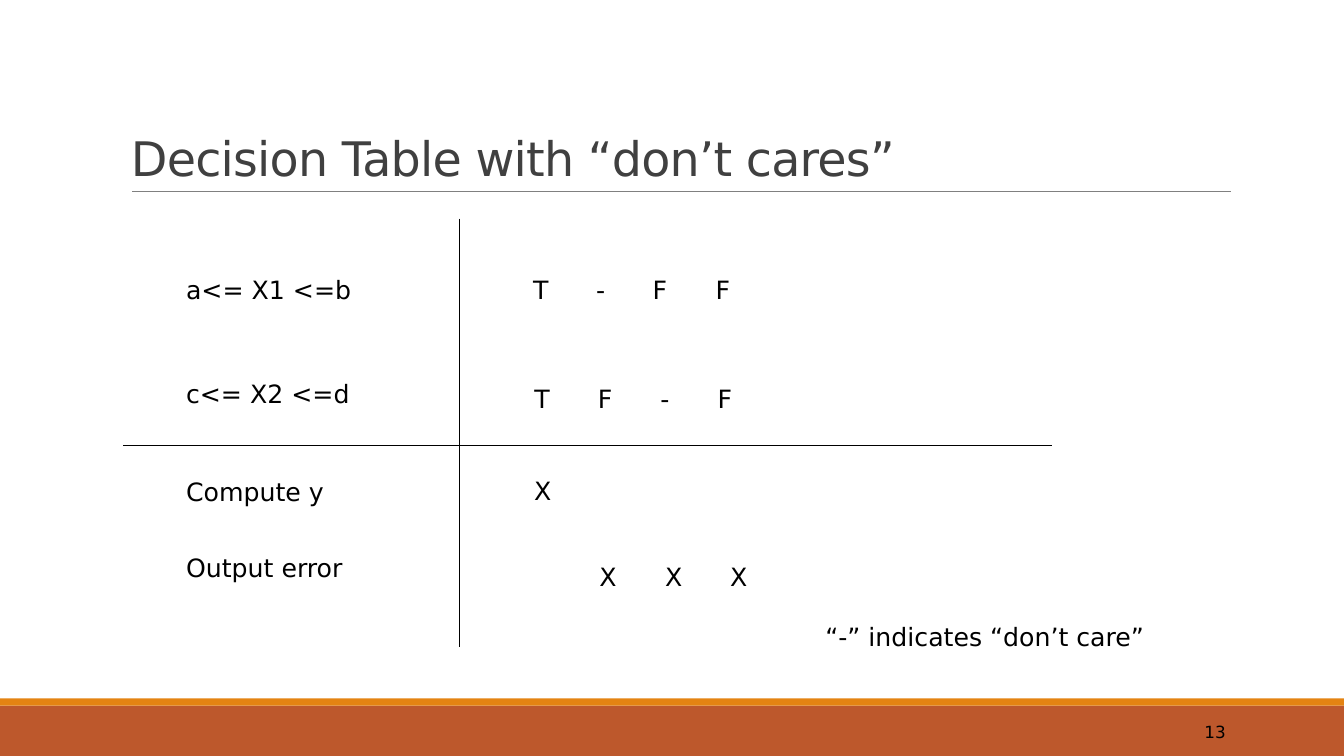
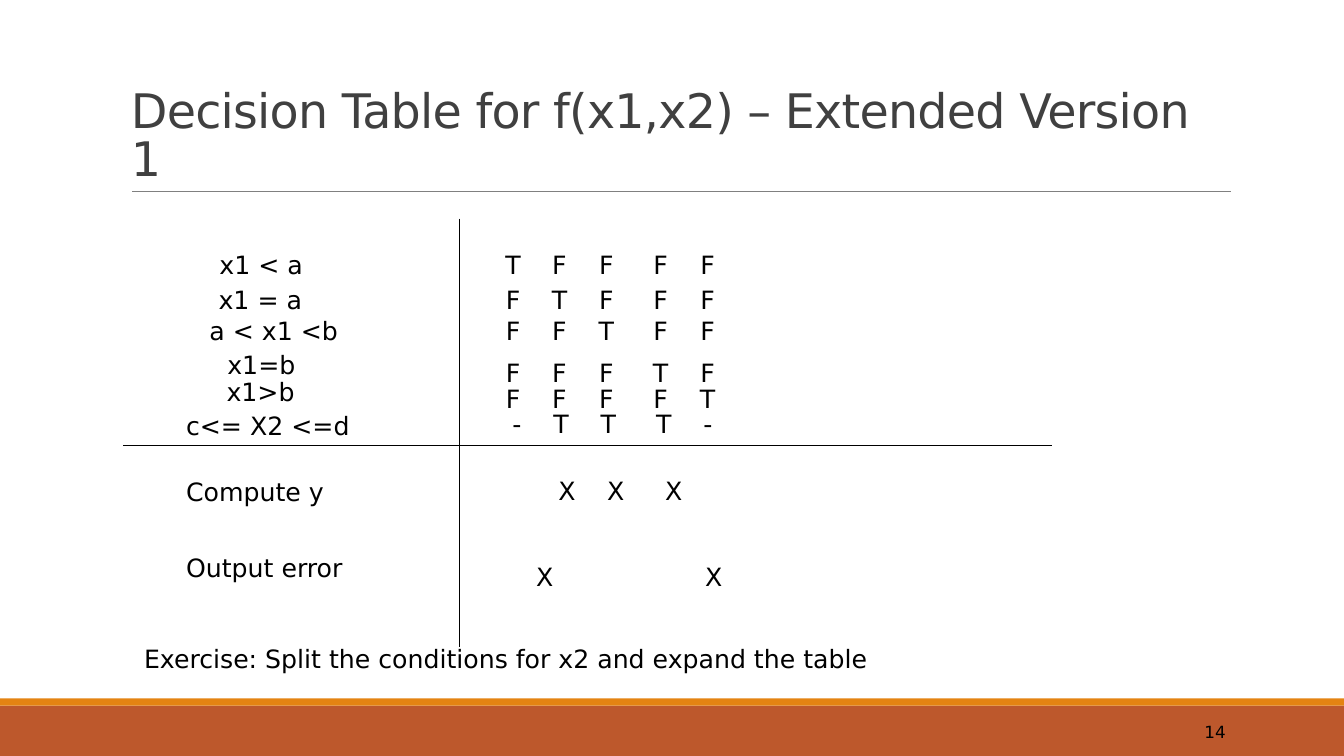
import pptx
import pptx.util
import pptx.dml.color
import pptx.enum.shapes
import pptx.enum.text
import pptx.oxml
import pptx.oxml.ns

Cm = pptx.util.Cm
Pt = pptx.util.Pt
qn = pptx.oxml.ns.qn
ANCHOR = pptx.enum.text.MSO_ANCHOR

FONT = "DejaVu Sans"
COLORS = {
    "band": "BD582C",
    "stripe": "E48312",
    "rule": "808080",
    "title": "404040",
    "text": "000000",
}
BANDS = [("band", 17.78, 1.27), ("stripe", 17.6, 0.18)]
LINES = [
    ("rule", 0.5, 3.33, 4.83, 31.01, 4.83),
    ("text", 0.75, 11.58, 5.51, 11.58, 16.31),
    ("text", 0.75, 3.1, 11.23, 26.52, 11.23),
]
ACTIONS = [("Compute y", 4.69, 11.89), ("Output error", 4.69, 13.79)]
MARKS_LEFT = 12.3
RULES = [12.93, 14.1, 15.28, 16.65, 17.83]

SLIDES = [
    {
        "number": "13",
        "title": "Decision Table with “don’t cares”",
        "labels": [
            ("a<= X1 <=b", 4.69, 6.78),
            ("c<= X2 <=d", 4.69, 9.4),
            ("“-” indicates “don’t care”", 20.8, 15.54),
        ],
        "marks": [
            ("T-FF", 6.78, [13.63, 15.14, 16.63, 18.22]),
            ("TF-F", 9.53, [13.66, 15.25, 16.76, 18.27]),
            ("X", 11.86, [13.68]),
            ("XXX", 14.02, [15.32, 16.98, 18.62]),
        ],
    },
    {
        "number": "14",
        "title": "Decision Table for f(x1,x2) – Extended Version 1",
        "labels": [
            ("x1 < a", 5.53, 6.15),
            ("x1 = a", 5.51, 7.04),
            ("a < x1 <b", 5.28, 7.82),
            ("x1=b", 5.73, 8.69),
            ("x1>b", 5.71, 9.35),
            ("c<= X2 <=d", 4.69, 10.21),
            ("Exercise: Split the conditions for x2 and expand the table", 3.63, 16.08),
        ],
        "marks": [
            ("TFFFF", 6.15, RULES),
            ("FTFFF", 7.04, RULES),
            ("FFTFF", 7.82, RULES),
            ("FFFTF", 8.89, RULES),
            ("FFFFT", 9.53, RULES),
            ("-TTT-", 10.16, [13.03, 14.14, 15.33, 16.73, 17.84]),
            ("XXX", 11.86, [14.29, 15.52, 16.98]),
            ("XX", 14.02, [13.73, 17.99]),
        ],
    },
]


def rgb(name):
    return pptx.dml.color.RGBColor.from_string(COLORS[name])


def add_text(s, text, x, y, w, h=1.02, size=18, color="text", anchor=ANCHOR.TOP):
    tf = s.shapes.add_textbox(Cm(x), Cm(y), Cm(w), Cm(h)).text_frame
    tf.word_wrap = True
    tf.vertical_anchor = anchor
    tf.margin_left = tf.margin_right = 0
    p = tf.paragraphs[0]
    r = p.add_run()
    r.text = text
    r.font.name = FONT
    r.font.size = Pt(size)
    r.font.color.rgb = rgb(color)
    return p


prs = pptx.Presentation()
prs.slide_width = Cm(33.87)
prs.slide_height = Cm(19.05)

for data in SLIDES:
    s = prs.slides.add_slide(prs.slide_layouts[6])

    for color, y, h in BANDS:
        sp = s.shapes.add_shape(
            pptx.enum.shapes.MSO_SHAPE.RECTANGLE, 0, Cm(y), prs.slide_width, Cm(h)
        )
        sp.shadow.inherit = False
        sp.fill.solid()
        sp.fill.fore_color.rgb = rgb(color)
        sp.line.fill.background()

    for color, width, x1, y1, x2, y2 in LINES:
        line = s.shapes.add_connector(
            pptx.enum.shapes.MSO_CONNECTOR.STRAIGHT, Cm(x1), Cm(y1), Cm(x2), Cm(y2)
        )
        line.line.color.rgb = rgb(color)
        line.line.width = Pt(width)
        pptx.oxml.ns.qn
        line._element.spPr.append(pptx.oxml.parse_xml(
            '<a:effectLst xmlns:a="http://schemas.openxmlformats.org/drawingml/2006/main"/>'
        ))

    p = add_text(s, data["title"], 3.3, 0.79, 27.43, 4.04, 34, "title", ANCHOR.BOTTOM)
    p.line_spacing = 0.85
    p.runs[0].font._element.set("spc", "-50")

    p = add_text(s, data["number"], 27.51, 17.93, 3.38, 1.02, 12, anchor=ANCHOR.MIDDLE)
    p.alignment = pptx.enum.text.PP_ALIGN.RIGHT

    for text, x, y in data["labels"] + ACTIONS:
        add_text(s, text, x, y, 6.5 if len(text) < 20 else 31 - x if x > 20 else 20)

    for marks, y, centres in data["marks"]:
        p = add_text(s, "".join("\t" + mark for mark in marks), MARKS_LEFT, y, 11.5)
        tabs = p._p.get_or_add_pPr().makeelement(qn("a:tabLst"), {})
        p._p.pPr.append(tabs)
        for x in centres:
            tab = tabs.makeelement(
                qn("a:tab"), {"pos": str(int(Cm(x - MARKS_LEFT))), "algn": "ctr"}
            )
            tabs.append(tab)

prs.save("out.pptx")
